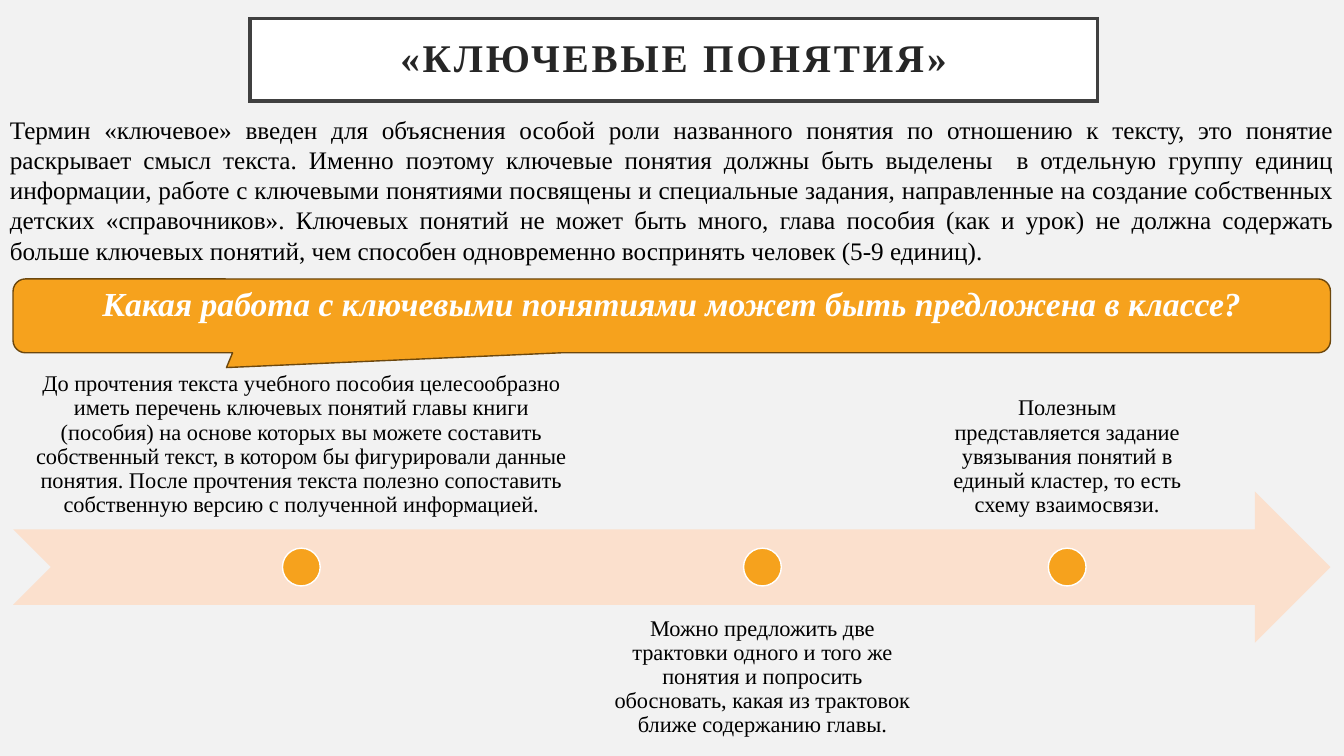
from lxml.etree import SubElement
from pptx import Presentation
from pptx.dml.color import RGBColor
from pptx.enum.shapes import MSO_SHAPE as Shape
from pptx.enum.text import MSO_ANCHOR as Anchor, MSO_AUTO_SIZE as AutoSize, PP_ALIGN as Align
from pptx.util import Cm, Pt

COLORS = {
    "background": "F2F2F2", "white": "FFFFFF", "frame": "404040", "title": "262626",
    "text": "000000", "accent": "F6A21D", "accent_line": "6C470D", "arrow": "FBE0CD",
}
FONT = "Times New Roman"

TITLE = "«КЛЮЧЕВЫЕ ПОНЯТИЯ»"
INTRO = (
    "Термин «ключевое» введен для объяснения особой роли названного понятия по отношению "
    "к тексту, это понятие раскрывает смысл текста. Именно поэтому ключевые понятия должны "
    "быть выделены  в отдельную группу единиц информации, работе с ключевыми понятиями "
    "посвящены и специальные задания, направленные на создание собственных детских "
    "«справочников». Ключевых понятий не может быть много, глава пособия (как и урок) не "
    "должна содержать больше ключевых понятий, чем способен одновременно воспринять человек "
    "(5-9 единиц)."
)
QUESTION = "Какая работа с ключевыми понятиями может быть предложена в классе?"
# Each step: label width in cm, text
STEPS = [
    (14.53, "До прочтения текста учебного пособия целесообразно иметь перечень ключевых понятий "
            "главы книги (пособия) на основе которых вы можете составить собственный текст, в "
            "котором бы фигурировали данные понятия. После прочтения текста полезно сопоставить "
            "собственную версию с полученной информацией."),
    (8.15, "Можно предложить две трактовки одного и того же понятия и попросить обосновать, "
           "какая из трактовок ближе содержанию главы."),
    (6.65, "Полезным представляется задание увязывания понятий в единый кластер, то есть схему "
           "взаимосвязи."),
]
STEP_GAP = 0.28


def color(name):
    return RGBColor.from_string(COLORS[name])


def paint(shape, fill, line=None, width=1):
    shape.fill.solid()
    shape.fill.fore_color.rgb = color(fill)
    if line:
        shape.line.color.rgb = color(line)
        shape.line.width = Pt(width)
    else:
        shape.line.fill.background()


def write(shape, text, size, ink="text", align=Align.CENTER, anchor=Anchor.TOP,
          spacing=1.0, margins=(0.25, 0.13), bold=False, italic=False):
    frame = shape.text_frame
    frame.word_wrap = True
    frame.auto_size = AutoSize.NONE
    frame.vertical_anchor = anchor
    frame.margin_left = frame.margin_right = Cm(margins[0])
    frame.margin_top = frame.margin_bottom = Cm(margins[1])
    para = frame.paragraphs[0]
    para.alignment = align
    para.line_spacing = spacing
    para.space_before = Pt(0)
    run = para.add_run()
    run.text = text
    run.font.name = FONT
    run.font.size = Pt(size)
    run.font.bold = bold
    run.font.italic = italic
    run.font.color.rgb = color(ink)
    return run


def add_preset(page, kind, left, top, width, height):
    shape = page.shapes.add_shape(kind, Cm(left), Cm(top), Cm(width), Cm(height))
    shape.shadow.inherit = False
    return shape


def add_text_area(page, left, top, width, height):
    return page.shapes.add_textbox(Cm(left), Cm(top), Cm(width), Cm(height))


def place_title(page, left, top, width, height):
    title = page.shapes.title
    title.left, title.top, title.width, title.height = map(Cm, (left, top, width, height))
    paint(title, "white", "frame", 2.5)
    SubElement(title.line._get_or_add_ln(), "{http://schemas.openxmlformats.org/drawingml/2006/main}miter", lim="800000")
    run = write(title, TITLE, 28, "title", anchor=Anchor.MIDDLE, spacing=0.9,
                margins=(0.51, 0.51), bold=True)
    run._r.get_or_add_rPr().set("spc", "200")


def place_intro(page, left, top, width, height):
    write(add_text_area(page, left, top, width, height), INTRO, 18, align=Align.JUSTIFY)


def place_question(page, left, top, width, height):
    callout = add_preset(page, Shape.ROUNDED_RECTANGULAR_CALLOUT, left, top, width, height)
    for index, value in enumerate((-0.338, 0.701, 0.167)):
        callout.adjustments[index] = value
    paint(callout, "accent", "accent_line")
    write(callout, QUESTION, 24, "white", margins=(0.25, 0), bold=True, italic=True)


def place_timeline(page, left, top, width, height):
    label_height, dot = 0.4 * height, 0.1 * height
    arrow = add_preset(page, Shape.NOTCHED_RIGHT_ARROW, left, top + 0.3 * height,
                       width, label_height)
    paint(arrow, "arrow")

    # Labels alternate above and below the arrow, each with a centred dot
    for index, (label_width, text) in enumerate(STEPS):
        above = index % 2 == 0
        label_top = top if above else top + height - label_height
        label = add_text_area(page, left, label_top, label_width, label_height)
        write(label, text, 16, anchor=Anchor.BOTTOM if above else Anchor.TOP,
              spacing=0.9, margins=(0.3, 0.3))
        marker = add_preset(page, Shape.OVAL, left + (label_width - dot) / 2,
                            top + (height - dot) / 2, dot, dot)
        paint(marker, "accent", "white")
        left += label_width + STEP_GAP


def main():
    deck = Presentation()
    deck.slide_width, deck.slide_height = Cm(33.87), Cm(19.05)
    page = deck.slides.add_slide(deck.slide_layouts[5])
    page.background.fill.solid()
    page.background.fill.fore_color.rgb = color("background")

    place_title(page, 6.3, 0.46, 21.36, 2.08)
    place_intro(page, 0, 2.74, 33.87, 4.11)
    place_question(page, 0.33, 7.03, 33.2, 1.86)
    place_timeline(page, 0.33, 9.53, 33.2, 9.52)
    deck.save("out.pptx")


if __name__ == "__main__":
    main()
